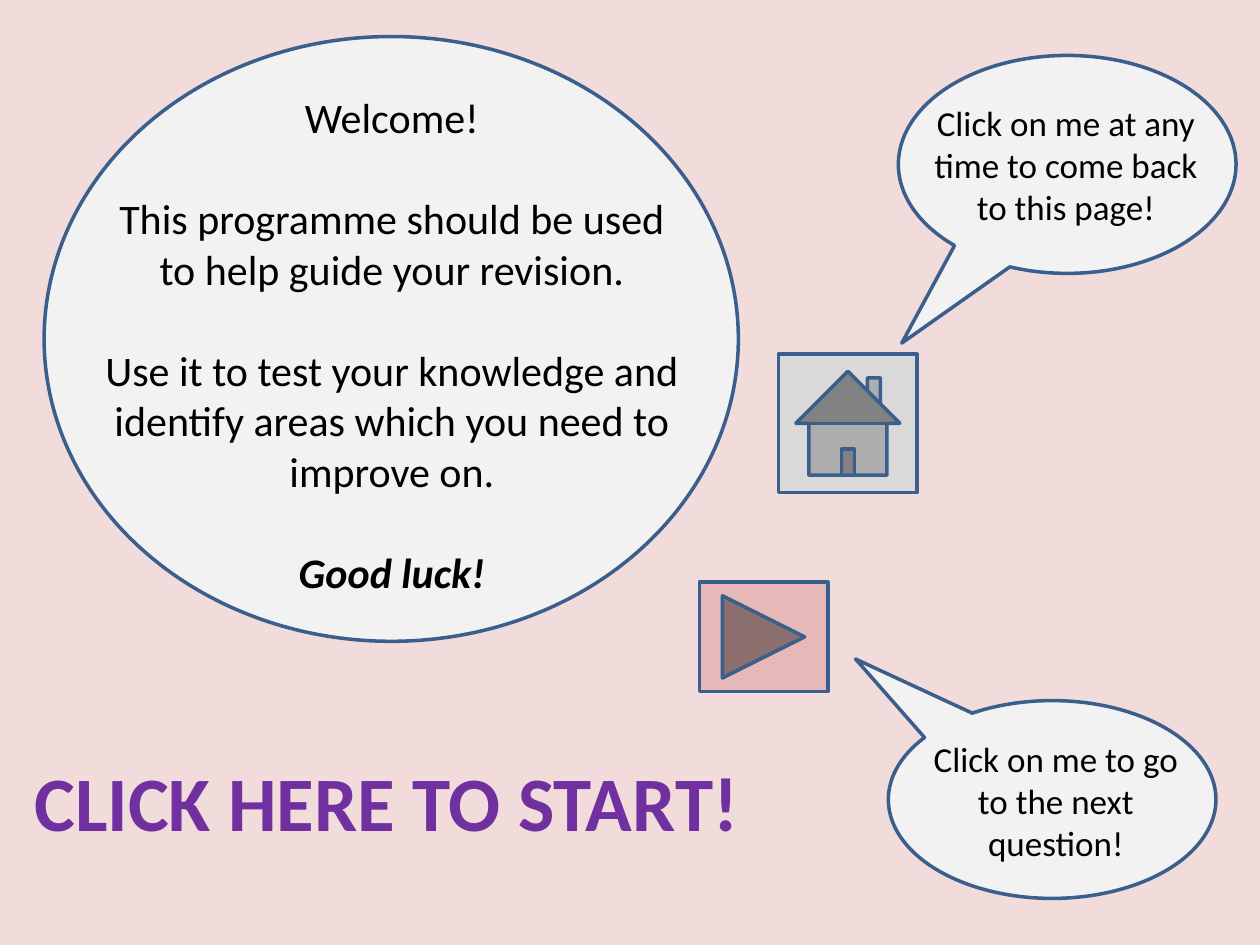
from pptx import Presentation
from pptx.dml.color import RGBColor
from pptx.enum.shapes import MSO_SHAPE
from pptx.enum.text import MSO_ANCHOR, PP_ALIGN
from pptx.util import Inches, Pt

ELLIPSE = MSO_SHAPE.OVAL
CALLOUT = MSO_SHAPE.OVAL_CALLOUT
HOME_BUTTON = MSO_SHAPE.ACTION_BUTTON_HOME
NEXT_BUTTON = MSO_SHAPE.ACTION_BUTTON_FORWARD_OR_NEXT
CENTER = PP_ALIGN.CENTER
TOP, MIDDLE = MSO_ANCHOR.TOP, MSO_ANCHOR.MIDDLE

BLUSH = RGBColor(0xF2, 0xDC, 0xDB)
PALE_GREY = RGBColor(0xF2, 0xF2, 0xF2)
BUTTON_GREY = RGBColor(0xD9, 0xD9, 0xD9)
BUTTON_PINK = RGBColor(0xE6, 0xB9, 0xB8)
OUTLINE_BLUE = RGBColor(0x3A, 0x5F, 0x8C)
PURPLE = RGBColor(0x70, 0x30, 0xA0)
BLACK = RGBColor(0, 0, 0)

FONT = "Calibri"
WELCOME_LINES = [
    "Welcome!",
    "This programme should be used to help guide your revision.",
    "Use it to test your knowledge and identify areas which you need to improve on.",
    "Good luck!",
]


def inches(box):
    return [Inches(length) for length in box]


def add_outlined(slide, preset, box, fill):
    shape = slide.shapes.add_shape(preset, *inches(box))
    shape.shadow.inherit = False
    shape.fill.solid()
    shape.fill.fore_color.rgb = fill
    shape.line.color.rgb = OUTLINE_BLUE
    shape.line.width = Pt(2)
    return shape


def write_lines(frame, lines, size, color=BLACK, gap=0, anchor=TOP):
    """Fill a frame with centred paragraphs, gap points apart."""
    frame.word_wrap = True
    frame.vertical_anchor = anchor
    for index, line in enumerate(lines):
        paragraph = frame.add_paragraph() if index else frame.paragraphs[0]
        paragraph.alignment = CENTER
        paragraph.space_before = Pt(gap if index else 0)
        run = paragraph.add_run()
        run.text = line
        run.font.name = FONT
        run.font.size = Pt(size)
        run.font.color.rgb = color
    return frame


def add_welcome(slide, box):
    left, top, width, height = box
    add_outlined(slide, ELLIPSE, box, PALE_GREY)
    text_box = slide.shapes.add_textbox(
        *inches((left + 0.32, top + 0.39, width - 0.63, height - 0.66)))
    frame = write_lines(text_box.text_frame, WELCOME_LINES, 24, gap=29)
    good_luck = frame.paragraphs[-1].runs[0].font
    good_luck.bold = good_luck.italic = True


def add_hint(slide, box, pointer, hint, text_top, rotation=0):
    """Add a speech bubble; pointer is the tip's offset before rotation."""
    left, top, width, height = box
    bubble = add_outlined(slide, CALLOUT, box, PALE_GREY)
    bubble.adjustments[0], bubble.adjustments[1] = pointer
    bubble.rotation = rotation
    text_box = slide.shapes.add_textbox(
        *inches((left + 0.15, top + text_top, 2.36, 1.11)))
    write_lines(text_box.text_frame, [hint], 20)


def add_start_title(slide, box):
    title = slide.shapes.title
    title.left, title.top, title.width, title.height = inches(box)
    frame = write_lines(title.text_frame, ["CLICK HERE TO START!"], 44,
                        PURPLE, anchor=MIDDLE)
    frame.paragraphs[0].runs[0].font.bold = True


def main():
    presentation = Presentation()
    presentation.slide_width, presentation.slide_height = Inches(10), Inches(7.5)
    slide = presentation.slides.add_slide(presentation.slide_layouts[5])
    background = slide.background.fill
    background.solid()
    background.fore_color.rgb = BLUSH

    add_welcome(slide, (0.35, 0.29, 5.51, 4.8))
    add_outlined(slide, HOME_BUTTON, (6.18, 2.81, 1.1, 1.1), BUTTON_GREY)
    add_hint(slide, (7.13, 0.44, 2.68, 1.73), (-0.49, 0.82),
             "Click on me at any time to come back to this page!", 0.32)
    add_outlined(slide, NEXT_BUTTON, (5.55, 4.62, 1.02, 0.87), BUTTON_PINK)
    add_hint(slide, (7.05, 5.56, 2.6, 1.57), (0.6, 0.71),
             "Click on me to go to the next question!", 0.24, rotation=180)
    add_start_title(slide, (0, 5.93, 6.14, 0.85))
    presentation.save("out.pptx")


if __name__ == "__main__":
    main()
